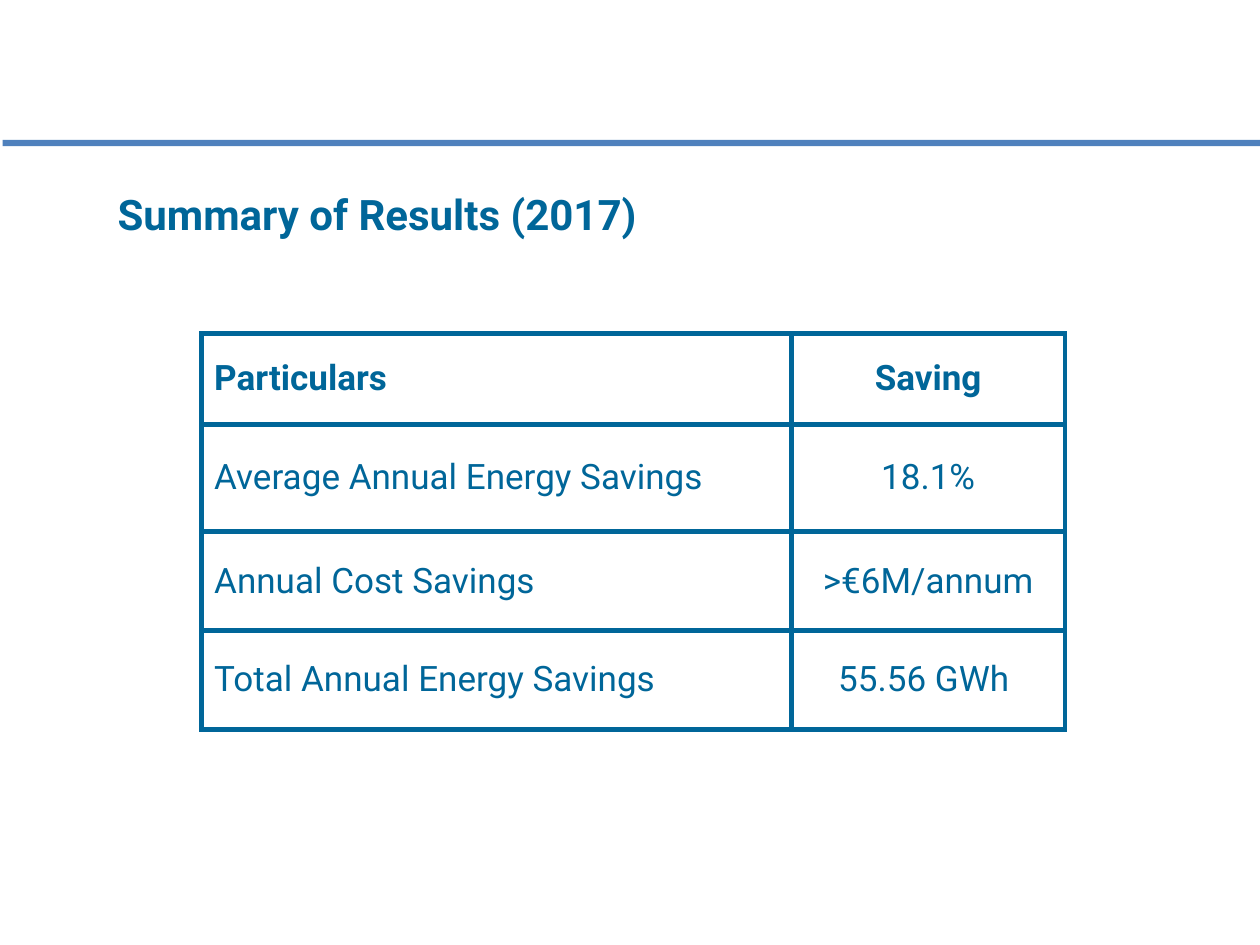
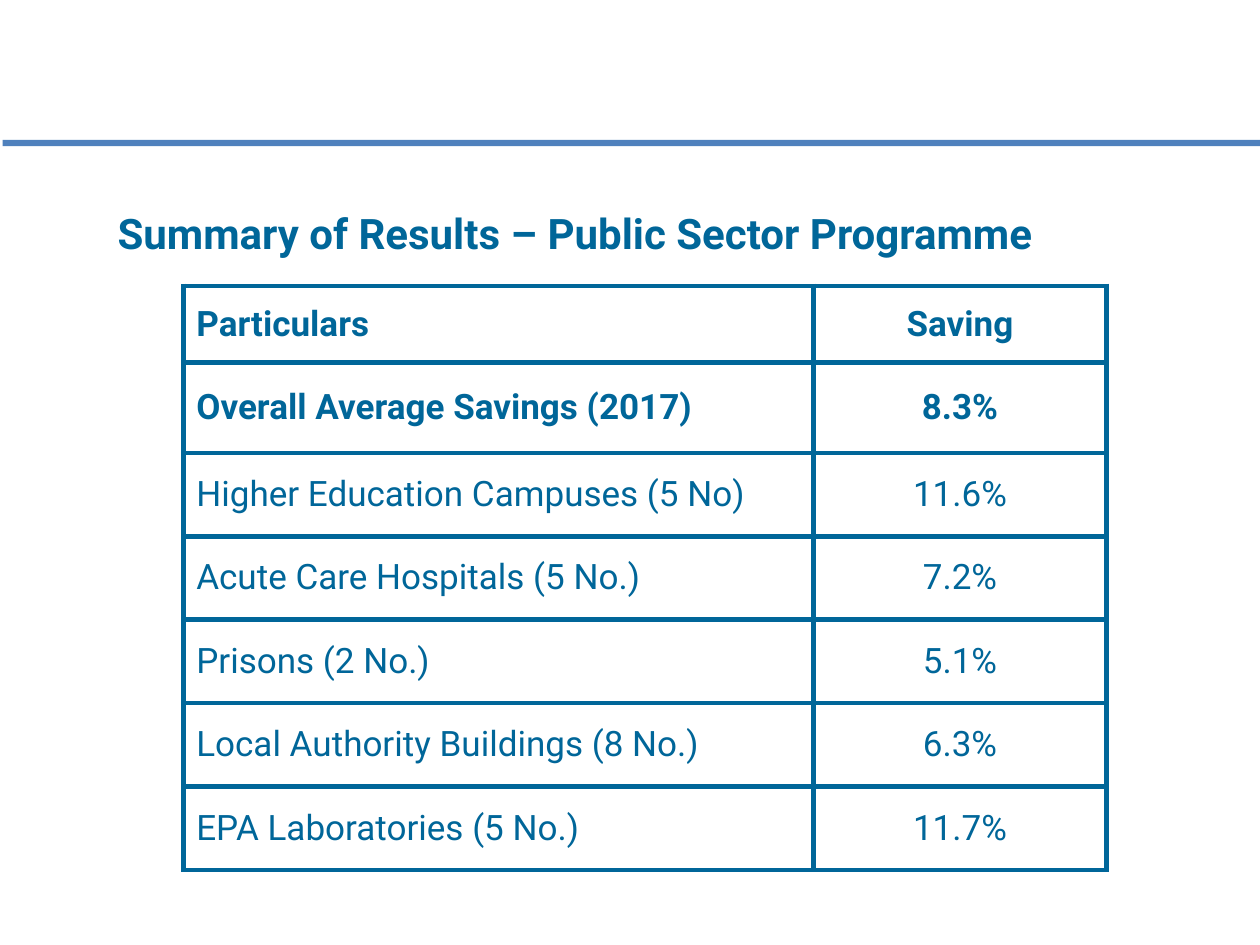
from lxml import etree
from pptx import Presentation
from pptx.dml.color import RGBColor
from pptx.enum.shapes import MSO_SHAPE as Shape
from pptx.enum.text import MSO_ANCHOR as Anchor, MSO_AUTO_SIZE as AutoSize, PP_ALIGN as Align
from pptx.oxml.ns import qn
from pptx.util import Pt

FONT = "Roboto"
TEXT_COLOUR = "006699"
BAND_COLOUR = "4F81BD"
BORDER_WIDTH = Pt(3)

SLIDES = [
    {
        "title": "Summary of Results (2017)",
        "title_box": (60, 106, 420, 34),
        "table_corner": (115.2, 190.6),
        "columns": [337, 156.4],
        "heights": [51.8, 61.4, 56.5, 56.5],
        "bold_rows": 1,
        "rows": [
            ("Particulars", "Saving"),
            ("Average Annual Energy Savings", "18.1%"),
            ("Annual Cost Savings", ">€6M/annum"),
            ("Total Annual Energy Savings", "55.56 GWh "),
        ],
    },
    {
        "title": "Summary of Results – Public Sector Programme",
        "title_box": (60, 117, 601, 34),
        "table_corner": (105, 163.4),
        "columns": [360, 167.2],
        "heights": [43.6, 51.8] + [47.7] * 5,
        "bold_rows": 2,
        "rows": [
            ("Particulars", "Saving"),
            ("Overall Average Savings (2017)", "8.3%"),
            ("Higher Education Campuses (5 No)", "11.6%"),
            ("Acute Care Hospitals (5 No.)", "7.2%"),
            ("Prisons (2 No.)", "5.1%"),
            ("Local Authority Buildings (8 No.)", "6.3%"),
            ("EPA Laboratories (5 No.)", "11.7%"),
        ],
    },
]


def rgb(colour):
    return RGBColor.from_string(colour)


def write(para, text, size, bold):
    """Add one run in the deck's font and text colour."""
    span = para.add_run()
    span.text = text
    span.font.name = FONT
    span.font.size = Pt(size)
    span.font.bold = bold
    span.font.color.rgb = rgb(TEXT_COLOUR)


deck = Presentation()
deck.slide_width, deck.slide_height = Pt(720), Pt(540)
title_only = deck.slide_layouts[5]

for content in SLIDES:
    page = deck.slides.add_slide(title_only)

    band = page.shapes.add_shape(Shape.RECTANGLE, Pt(1.5), Pt(80), Pt(718.5), Pt(3.5))
    band.shadow.inherit = False
    band.fill.solid()
    band.fill.fore_color.rgb = rgb(BAND_COLOUR)
    band.line.fill.background()

    title = page.shapes.title
    title.left, title.top, title.width, title.height = map(Pt, content["title_box"])
    frame = title.text_frame
    frame.auto_size = AutoSize.NONE
    frame.word_wrap = True
    frame.vertical_anchor = Anchor.BOTTOM
    para = frame.paragraphs[0]
    para.alignment = Align.LEFT
    write(para, content["title"], 24, True)

    rows, columns, heights = content["rows"], content["columns"], content["heights"]
    left, top = content["table_corner"]
    table = page.shapes.add_table(
        len(rows), len(columns), Pt(left), Pt(top), Pt(sum(columns)), Pt(sum(heights))
    ).table
    table.first_row = table.horz_banding = False
    for column, width in zip(table.columns, columns):
        column.width = Pt(width)
    for row, height in zip(table.rows, heights):
        row.height = Pt(height)

    for row_index, texts in enumerate(rows):
        for column_index, text in enumerate(texts):
            cell = table.cell(row_index, column_index)
            cell.vertical_anchor = Anchor.MIDDLE
            properties = cell._tc.get_or_add_tcPr()
            for side in ("a:lnL", "a:lnR", "a:lnT", "a:lnB"):
                border = etree.SubElement(properties, qn(side), w=str(BORDER_WIDTH))
                paint = etree.SubElement(border, qn("a:solidFill"))
                etree.SubElement(paint, qn("a:srgbClr"), val=TEXT_COLOUR)
            cell.fill.background()
            para = cell.text_frame.paragraphs[0]
            para.alignment = Align.CENTER if column_index else Align.LEFT
            write(para, text, 20, row_index < content["bold_rows"])

deck.save("out.pptx")
